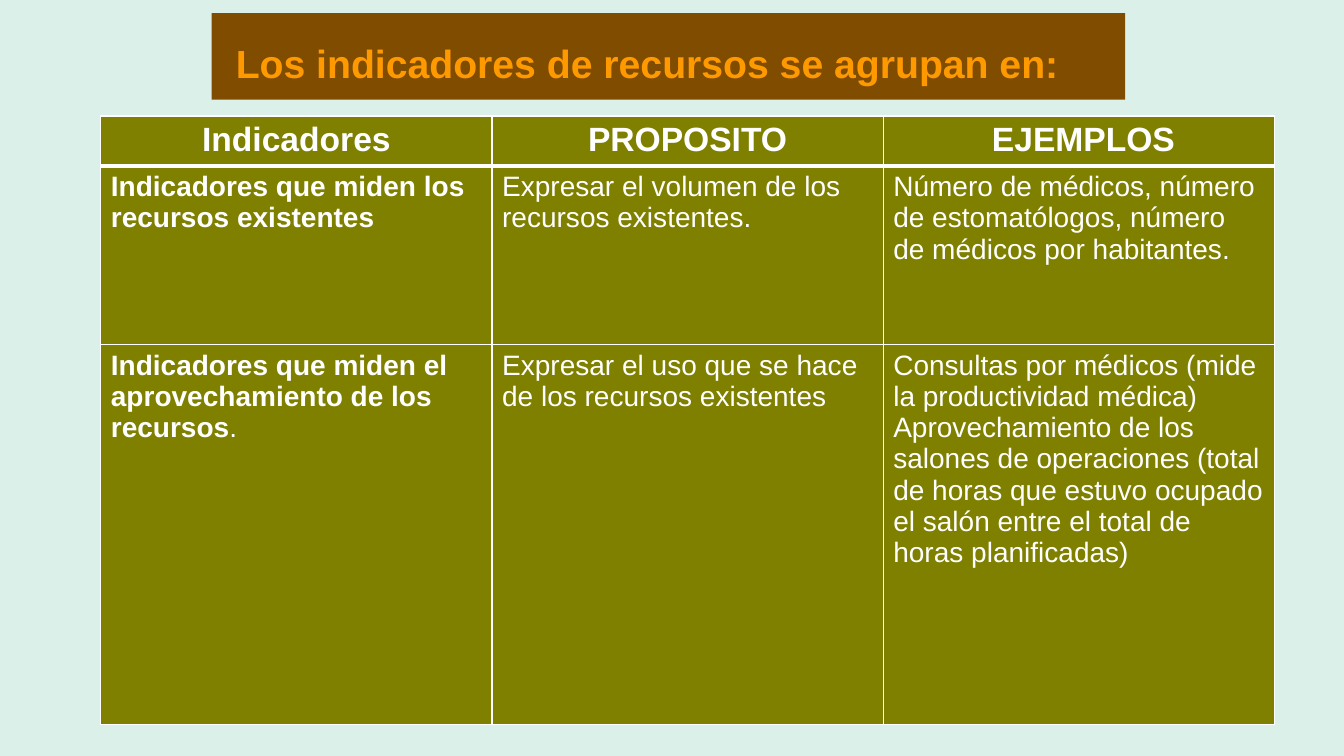
"""Builds the slide on how resource indicators are grouped."""
from lxml import etree
from pptx import Presentation
from pptx import util as u
from pptx.dml.color import RGBColor
from pptx.enum import text
from pptx.oxml.ns import qn

COLORS = {"background": "DCF0EA", "banner": "804C00", "heading": "FF9900",
          "cell": "7F8000", "white": "FFFFFF"}
HEADING = [(" ", 40, "Times New Roman"),
           ("Los indicadores de recursos se agrupan en:", 28, "Arial")]
HEADERS = ["Indicadores", "PROPOSITO", " EJEMPLOS"]
GROUPS = [
    [[("Indicadores que miden los recursos existentes", True)],
     [("Expresar el volumen de los recursos existentes.", False)],
     [("Número de médicos, número de estomatólogos, número de médicos "
       "por habitantes.", False)]],
    [[("Indicadores que miden el aprovechamiento de los recursos", True),
      (".", False)],
     [("Expresar el uso que se hace de los recursos existentes", False)],
     [("Consultas por médicos (mide la productividad médica) "
       "Aprovechamiento de los salones de operaciones (total de horas que "
       "estuvo ocupado el salón entre el total de horas planificadas)", False)]],
]
ROWS = [[[(header, True)] for header in HEADERS]] + GROUPS
ROW_HEIGHTS = [0.5, 1.77, 3.77]
COLUMN_WIDTH = 3.88


def color(name):
    return RGBColor.from_string(COLORS[name])


def paint(fill, name):
    fill.solid()
    fill.fore_color.rgb = color(name)


def add_run(paragraph, words, size, face, bold, tint):
    run = paragraph.add_run()
    run.text = words
    run.font.size = u.Pt(size)
    run.font.name = face
    run.font.bold = bold
    run.font.color.rgb = color(tint)


def add_borders(cell, row):
    widths = {"a:lnL": 1, "a:lnR": 1, "a:lnT": 3 if row == 1 else 1,
              "a:lnB": 3 if row == 0 else 1}
    properties = cell._tc.get_or_add_tcPr()
    for side, width in widths.items():
        line = etree.SubElement(properties, qn(side), w=str(u.Pt(width)))
        solid = etree.SubElement(line, qn("a:solidFill"))
        etree.SubElement(solid, qn("a:srgbClr"), val=COLORS["white"])


def add_heading(slide):
    heading = slide.shapes.title
    heading.left, heading.top = u.Inches(2.1), u.Inches(0.13)
    heading.width, heading.height = u.Inches(9.06), u.Inches(0.86)
    paint(heading.fill, "banner")
    frame = heading.text_frame
    frame.auto_size = text.MSO_AUTO_SIZE.NONE
    frame.vertical_anchor = text.MSO_ANCHOR.MIDDLE
    paragraph = frame.paragraphs[0]
    paragraph.alignment = text.PP_ALIGN.LEFT
    for words, size, face in HEADING:
        add_run(paragraph, words, size, face, True, "heading")


def add_indicators(slide):
    indicators = slide.shapes.add_table(
        len(ROWS), len(HEADERS), u.Inches(1), u.Inches(1.15),
        u.Inches(COLUMN_WIDTH * len(HEADERS)), u.Inches(sum(ROW_HEIGHTS))).table
    for column in indicators.columns:
        column.width = u.Inches(COLUMN_WIDTH)
    for r, (contents, height) in enumerate(zip(ROWS, ROW_HEIGHTS)):
        indicators.rows[r].height = u.Inches(height)
        for c, pieces in enumerate(contents):
            cell = indicators.cell(r, c)
            add_borders(cell, r)
            paint(cell.fill, "cell")
            paragraph = cell.text_frame.paragraphs[0]
            paragraph.alignment = text.PP_ALIGN.LEFT if r else text.PP_ALIGN.CENTER
            for words, bold in pieces:
                add_run(paragraph, words, 20 if r else 24, "Arial", bold, "white")


def main():
    deck = Presentation()
    deck.slide_width, deck.slide_height = u.Inches(13.33), u.Inches(7.5)
    slide = deck.slides.add_slide(deck.slide_layouts[5])
    paint(slide.background.fill, "background")
    add_heading(slide)
    add_indicators(slide)
    deck.save("out.pptx")


if __name__ == "__main__":
    main()
